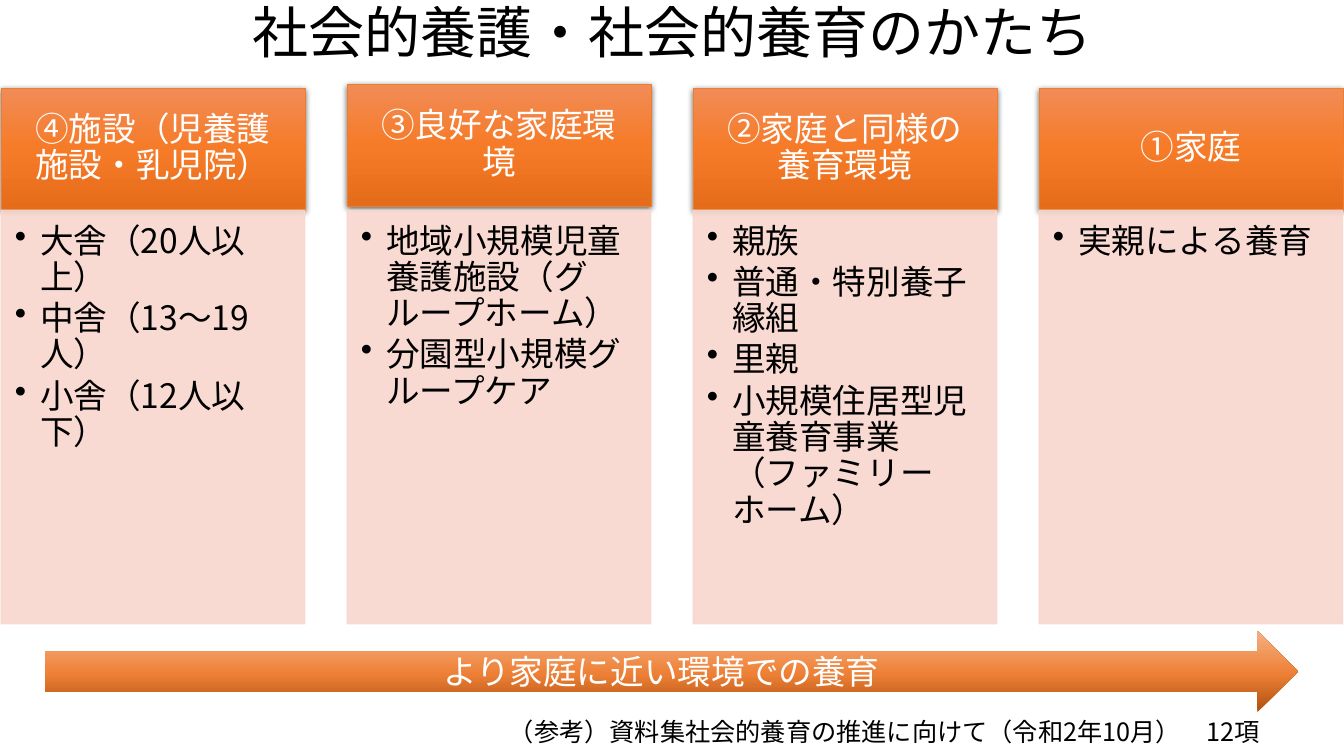
import copy
import pptx
import pptx.util
import pptx.enum.dml
import pptx.enum.lang
import pptx.enum.shapes
import pptx.enum.text
import pptx.dml.color
import pptx.oxml
import pptx.oxml.ns

INK = {
    "black": "000000", "white": "FFFFFF", "edge": "ED7D31", "pale": "F8D7CE",
    "top": "F18C57", "mid": "F67B28", "low": "E56C19",
    "dark": "B0500F", "warm": "EE8137", "light": "F4B183",
}
KIND = pptx.enum.shapes.MSO_SHAPE
ALIGN = pptx.enum.text.PP_ALIGN
ANCHOR = pptx.enum.text.MSO_ANCHOR

HEAD_FILL = [(0, "top"), (0.5, "mid"), (1, "low")]
ARROW_FILL = [(0, "dark"), (0.48, "warm"), (1, "light")]

COLS = [
    ("④施設（児養護施設・乳児院）", 88,
     ["大舎（20人以上）", "中舎（13〜19人）", "小舎（12人以下）"]),
    ("③良好な家庭環境", 84,
     ["地域小規模児童養護施設（グループホーム）", "分園型小規模グループケア"]),
    ("②家庭と同様の養育環境", 88,
     ["親族", "普通・特別養子縁組", "里親", "小規模住居型児童養育事業（ファミリーホーム）"]),
    ("①家庭", 88, ["実親による養育"]),
]


def px(num):
    return pptx.util.Emu(round(num * 914400 / 100.8))


def rgb(name):
    return pptx.dml.color.RGBColor.from_string(INK[name])


def node(tag, **attrs):
    item = pptx.oxml.parse_xml(f"<a:{tag} {pptx.oxml.ns.nsdecls('a')}/>")
    for key, val in attrs.items():
        item.set(key, str(val))
    return item


class Deck:
    """Holds the text style and the current slide, and draws its parts."""

    def __init__(self):
        self.font = "Noto Sans CJK JP"
        self.show = pptx.Presentation()
        self.show.slide_width, self.show.slide_height = px(1344), px(756)
        self.slide = self.show.slides.add_slide(self.show.slide_layouts[6])

    def text(self, shape, lines, size, ink, align=ALIGN.LEFT,
             anchor=ANCHOR.TOP, pads=(10, 5, 10, 5), space=0.9):
        frame = shape.text_frame
        frame.text = "\n".join(lines)
        frame.word_wrap = True
        frame.vertical_anchor = anchor
        (frame.margin_left, frame.margin_top,
         frame.margin_right, frame.margin_bottom) = map(px, pads)
        for para in frame.paragraphs:
            para.alignment = align
            para.line_spacing = space
            for run in para.runs:
                run.font.size = pptx.util.Pt(size)
                run.font.name = self.font
                run.font.color.rgb = rgb(ink)
                run.font.language_id = pptx.enum.lang.MSO_LANGUAGE_ID.JAPANESE
                run._r.get_or_add_rPr().append(node("ea", typeface=self.font))

    def label(self, box, text, size, align=ALIGN.LEFT):
        shape = self.slide.shapes.add_textbox(*map(px, box))
        self.text(shape, [text], size, "black", align)

    def shape(self, kind, box, edge=None):
        shape = self.slide.shapes.add_shape(kind, *map(px, box))
        shape.shadow.inherit = False
        if edge:
            shape.line.color.rgb = rgb(edge)
            shape.line.width = pptx.util.Pt(0.5)
        else:
            shape.line.fill.background()
        return shape

    def blend(self, shape, stops, angle):
        fill = shape.fill
        fill.gradient()
        fill.gradient_angle = angle
        first = shape._element.xpath("./p:spPr/a:gradFill/a:gsLst/a:gs")[0]
        first.addnext(copy.deepcopy(first))
        for stop, (place, ink) in zip(fill.gradient_stops, stops):
            stop.position = place
            stop.color.rgb = rgb(ink)

    def shade(self, shape):
        cast = node("outerShdw", blurRad=57150, dist=19050, dir=5400000,
                    algn="ctr", rotWithShape=0)
        tint = node("srgbClr", val=INK["black"])
        tint.append(node("alpha", val=63000))
        cast.append(tint)
        shape._element.xpath("./p:spPr/a:effectLst")[0].append(cast)

    def head(self, box, text):
        shape = self.shape(KIND.RECTANGLE, box, "edge")
        self.blend(shape, HEAD_FILL, 270)
        self.shade(shape)
        self.text(shape, [text], 24, "white", ALIGN.CENTER,
                  ANCHOR.MIDDLE, (19, 11, 19, 11))

    def body(self, box, lines):
        shape = self.shape(KIND.RECTANGLE, box, "pale")
        shape.fill.solid()
        shape.fill.fore_color.rgb = rgb("pale")
        for tint in shape._element.xpath("./p:spPr//a:srgbClr"):
            tint.append(node("alpha", val=90000))
        self.text(shape, lines, 24, "black", pads=(14, 14, 19, 21))
        for para in shape.text_frame.paragraphs:
            para.space_after = pptx.util.Pt(3.6)
            props = para._p.get_or_add_pPr()
            props.set("marL", "228600")
            props.set("indent", "-228600")
            props.append(node("buChar", char="•"))

    def arrow(self, box, text):
        shape = self.shape(KIND.RIGHT_ARROW, box)
        self.blend(shape, ARROW_FILL, 90)
        self.text(shape, [text], 24, "white", ALIGN.CENTER,
                  ANCHOR.MIDDLE, space=1.0)


def main():
    deck = Deck()
    deck.label((93, 0, 1159, 146), "社会的養護・社会的養育のかたち", 40, ALIGN.CENTER)
    for col, (name, top, items) in enumerate(COLS):
        left = 1 + 346 * col
        deck.head((left, top, 304, 122), name)
        deck.body((left, 210, 304, 414), items)
    deck.arrow((45, 631, 1253, 81), "より家庭に近い環境での養育")
    deck.label((499, 715, 845, 37),
               "（参考）資料集社会的養育の推進に向けて（令和2年10月）　12項", 18)
    deck.show.save("out.pptx")


if __name__ == "__main__":
    main()
